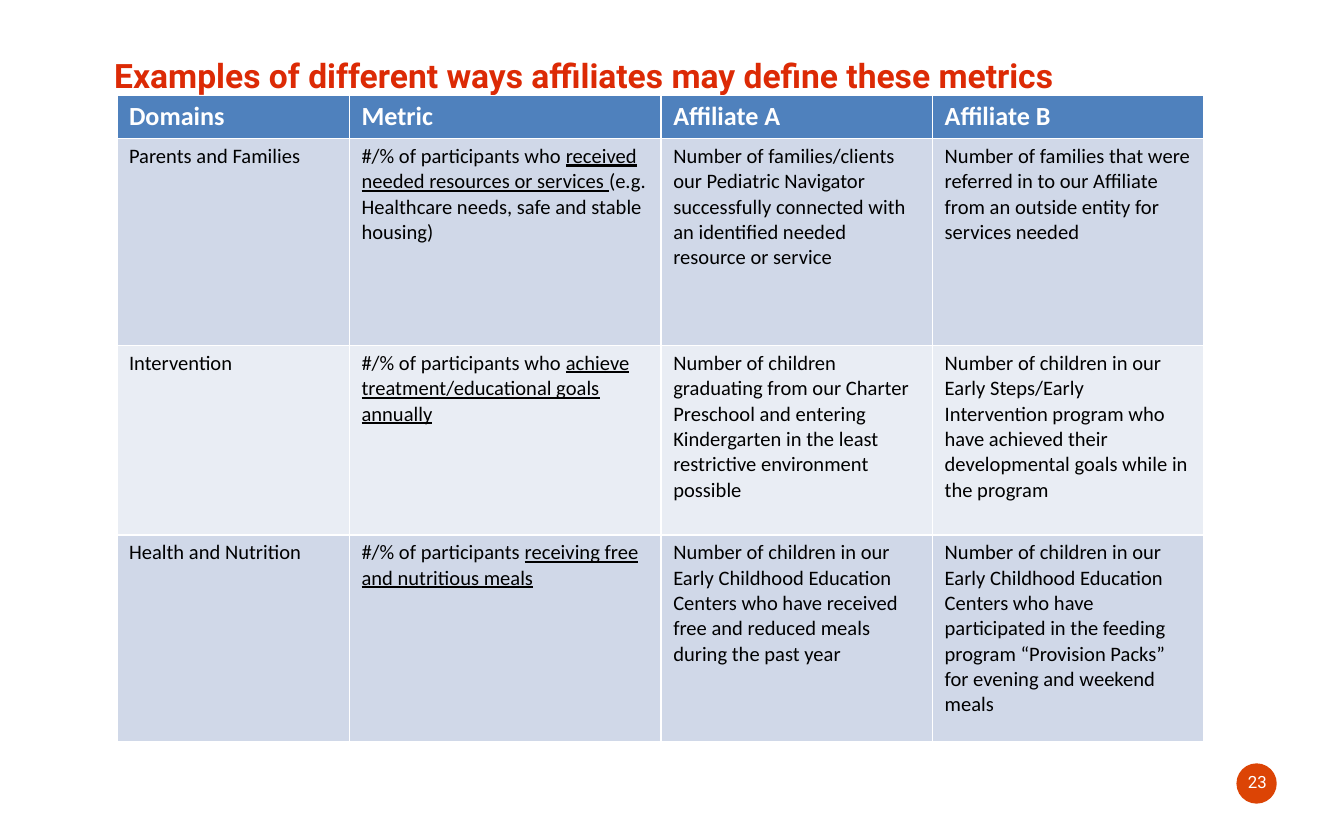
from pptx import Presentation
from pptx.dml.color import RGBColor
from pptx.enum.shapes import MSO_SHAPE
from pptx.enum.text import MSO_ANCHOR, MSO_AUTO_SIZE, PP_ALIGN
from pptx.util import Inches, Pt


def rgb(value):
    return RGBColor.from_string(value)


def add_text(tf, text, size=11, color="000000", font="Calibri", bold=False,
             align=PP_ALIGN.LEFT):
    """Write text into the first paragraph; parts between | marks are underlined."""
    p = tf.paragraphs[0]
    p.alignment = align
    for i, part in enumerate(text.split("|")):
        if not part:
            continue
        r = p.add_run()
        r.text = part
        r.font.size = Pt(size)
        r.font.name = font
        r.font.bold = bold
        r.font.underline = i % 2 == 1
        r.font.color.rgb = rgb(color)


prs = Presentation()
prs.slide_width, prs.slide_height = Inches(10), Inches(6.25)
s = prs.slides.add_slide(prs.slide_layouts[5])

# Title
title = s.shapes.title
title.left, title.top = Inches(0.75), Inches(0.3)
title.width, title.height = Inches(8.1), Inches(0.52)
tf = title.text_frame
tf.auto_size = MSO_AUTO_SIZE.NONE
tf.vertical_anchor = MSO_ANCHOR.MIDDLE
add_text(tf, "Examples of different ways affiliates may define these metrics",
         size=18, color="DC2A05", font="Roboto", bold=True)

# Metrics table
rows = [
    ["Domains", "Metric", "Affiliate A", "Affiliate B"],
    ["Parents and Families",
     "#/% of participants who |received needed resources or services |"
     "(e.g. Healthcare needs, safe and stable housing)",
     "Number of families/clients our Pediatric Navigator successfully "
     "connected with an identified needed resource or service",
     "Number of families that were referred in to our Affiliate from an "
     "outside entity for services needed"],
    ["Intervention",
     "#/% of participants who |achieve treatment/educational goals annually|",
     "Number of children graduating from our Charter Preschool and entering "
     "Kindergarten in the least restrictive environment possible",
     "Number of children in our Early Steps/Early Intervention program who "
     "have achieved their developmental goals while in the program"],
    ["Health and Nutrition",
     "#/% of participants |receiving free and nutritious meals|",
     "Number of children in our Early Childhood Education Centers who have "
     "received free and reduced meals during the past year",
     "Number of children in our Early Childhood Education Centers who have "
     "participated in the feeding program “Provision Packs” for evening and "
     "weekend meals"],
]
col_widths = [1.73, 2.32, 2.02, 2.02]
row_heights = [0.32, 1.54, 1.41, 1.54]
row_fills = ["4F81BD", "D0D8E8", "E9EDF4", "D0D8E8"]

table = s.shapes.add_table(len(rows), len(col_widths), Inches(0.87), Inches(0.71),
                           Inches(sum(col_widths)), Inches(sum(row_heights))).table
for column, width in zip(table.columns, col_widths):
    column.width = Inches(width)
for i, texts in enumerate(rows):
    table.rows[i].height = Inches(row_heights[i])
    style = dict(size=14, color="FFFFFF", bold=True) if i == 0 else {}
    for j, text in enumerate(texts):
        cell = table.cell(i, j)
        cell.margin_left = cell.margin_right = Inches(0.09)
        cell.margin_top = cell.margin_bottom = Inches(0.04)
        cell.fill.solid()
        cell.fill.fore_color.rgb = rgb(row_fills[i])
        add_text(cell.text_frame, text, **style)

# Page number badge
badge = s.shapes.add_shape(MSO_SHAPE.OVAL, Inches(9.2), Inches(5.68),
                           Inches(0.3), Inches(0.3))
badge.shadow.inherit = False
badge.fill.solid()
badge.fill.fore_color.rgb = rgb("DC4405")
badge.line.fill.background()

number = s.shapes.add_textbox(Inches(9.06), Inches(5.65), Inches(0.59), Inches(0.33))
tf = number.text_frame
tf.word_wrap = True
tf.vertical_anchor = MSO_ANCHOR.MIDDLE
add_text(tf, "23", size=9, color="FFFFFF", font="Roboto", align=PP_ALIGN.CENTER)

prs.save("out.pptx")
